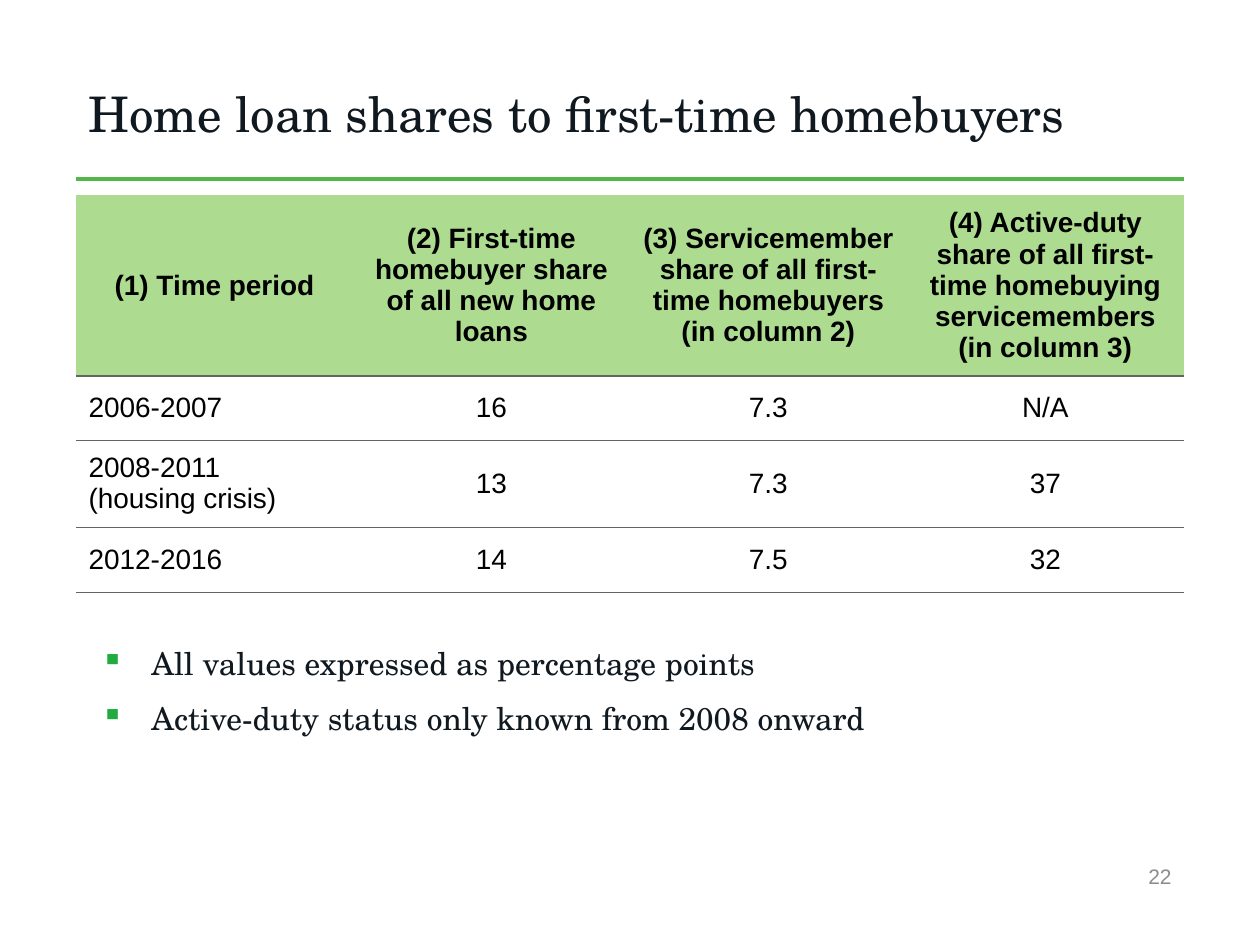
from lxml import etree
from pptx import Presentation
from pptx import util as u
from pptx.dml.color import RGBColor
from pptx.enum import shapes, text
from pptx.oxml.ns import qn

PX = 914400 / 126
INK = RGBColor(0x10, 0x18, 0x20)
BLACK = RGBColor(0, 0, 0)
GRAY = RGBColor(0x8C, 0x8C, 0x8D)
RULE = RGBColor(0x50, 0xB7, 0x48)
HEAD = RGBColor(0xAD, 0xDC, 0x91)
EDGE = RGBColor(0x63, 0x64, 0x63)
MARK = RGBColor(0x20, 0xAA, 0x3F)
SERIF, SANS = "TeX Gyre Schola", "Arial"
MID = text.MSO_ANCHOR.MIDDLE
LEFT, CENTER, RIGHT = text.PP_ALIGN.LEFT, text.PP_ALIGN.CENTER, text.PP_ALIGN.RIGHT

ROWS = [
    ["(1) Time period", "(2) First-time homebuyer share of all new home loans",
     "(3) Servicemember share of all first-time homebuyers (in column 2)",
     "(4) Active-duty share of all first-time homebuying servicemembers (in column 3)"],
    ["2006-2007", "16", "7.3", "N/A"],
    ["2008-2011\n(housing crisis)", "13", "7.3", "37"],
    ["2012-2016", "14", "7.5", "32"],
]
HEIGHTS = [181, 64, 87, 65]
NOTES = ["All values expressed as percentage points",
         "Active-duty status only known from 2008 onward"]
NO_STYLE = "{2D5ABB26-0587-4C30-8999-92F81FD0307C}"


def emu(*vals):
    return [u.Emu(round(v * PX)) for v in vals]


def style(para, align, color, **form):
    para.alignment = align
    for key, val in form.items():
        setattr(para.font, key, val)
    para.font.color.rgb = color


def add(parent, tag, **attrs):
    return etree.SubElement(parent, qn(tag), attrs)


def put_title(slide, box, words):
    title = slide.shapes.title
    title.left, title.top, title.width, title.height = emu(*box)
    frame = title.text_frame
    frame.text = words
    frame.vertical_anchor = MID
    frame.word_wrap = True
    style(frame.paragraphs[0], LEFT, INK, name=SERIF, size=u.Pt(28))


def put_rule(slide, left, top, width):
    line = slide.shapes.add_connector(
        shapes.MSO_CONNECTOR.STRAIGHT, *emu(left, top, left + width, top))
    line.line.color.rgb = RULE
    line.line.width = u.Pt(2)
    add(line._element.spPr, "a:effectLst")


def edge(cell, width):
    """Draw the bottom border of a cell."""
    props = cell._tc.get_or_add_tcPr()
    line = add(props, "a:lnB", w=str(u.Pt(width)))
    add(add(line, "a:solidFill"), "a:srgbClr", val=str(EDGE))
    props.insert(0, line)


def put_table(slide, left, top, width):
    rows, cols = len(ROWS), len(ROWS[0])
    frame = slide.shapes.add_table(rows, cols, *emu(left, top, width, sum(HEIGHTS)))
    table = frame.table
    table.horz_banding = False
    table._tbl.tblPr.find(qn("a:tableStyleId")).text = NO_STYLE
    for col in table.columns:
        col.width = emu(width / cols)[0]
    for r, row in enumerate(ROWS):
        table.rows[r].height = emu(HEIGHTS[r])[0]
        for c, words in enumerate(row):
            cell = table.cell(r, c)
            cell.text = words
            cell.vertical_anchor = MID
            for side in ("left", "right", "top", "bottom"):
                setattr(cell, "margin_" + side, u.Inches(0.1))
            if r == 0:
                cell.fill.solid()
                cell.fill.fore_color.rgb = HEAD
            else:
                cell.fill.background()
            edge(cell, 1 if r in (0, rows - 1) else 0.5)
            for para in cell.text_frame.paragraphs:
                style(para, LEFT if r and c == 0 else CENTER, BLACK,
                      name=SANS, size=u.Pt(16), bold=r == 0)


def put_notes(slide, box):
    frame = slide.shapes.add_textbox(*emu(*box)).text_frame
    frame.word_wrap = True
    frame.text = "\n".join(NOTES)
    for i, para in enumerate(frame.paragraphs):
        props = para._p.get_or_add_pPr()
        props.set("marL", str(u.Inches(0.5)))
        props.set("indent", str(u.Inches(-0.4)))
        if i:
            para.space_before = u.Pt(10)
        add(add(props, "a:buClr"), "a:srgbClr", val=str(MARK))
        add(props, "a:buChar", char="▪")
        style(para, LEFT, INK, name=SERIF, size=u.Pt(18))


def put_page(slide, box, num):
    frame = slide.shapes.add_textbox(*emu(*box)).text_frame
    frame.word_wrap = True
    frame.vertical_anchor = MID
    frame.text = num
    style(frame.paragraphs[0], RIGHT, GRAY, name=SANS, size=u.Pt(12))


def main():
    deck = Presentation()
    deck.slide_width, deck.slide_height = emu(1260, 945)
    slide = deck.slides.add_slide(deck.slide_layouts[5])
    left, width = 76, 1108
    put_rule(slide, left, 179, width)
    put_title(slide, (left, 62, width, 102), "Home loan shares to first-time homebuyers")
    put_table(slide, left, 195, width)
    put_notes(slide, (left, 638, width, 144))
    put_page(slide, (785, 851, 399, 50), "22")
    deck.save("out.pptx")


if __name__ == "__main__":
    main()
